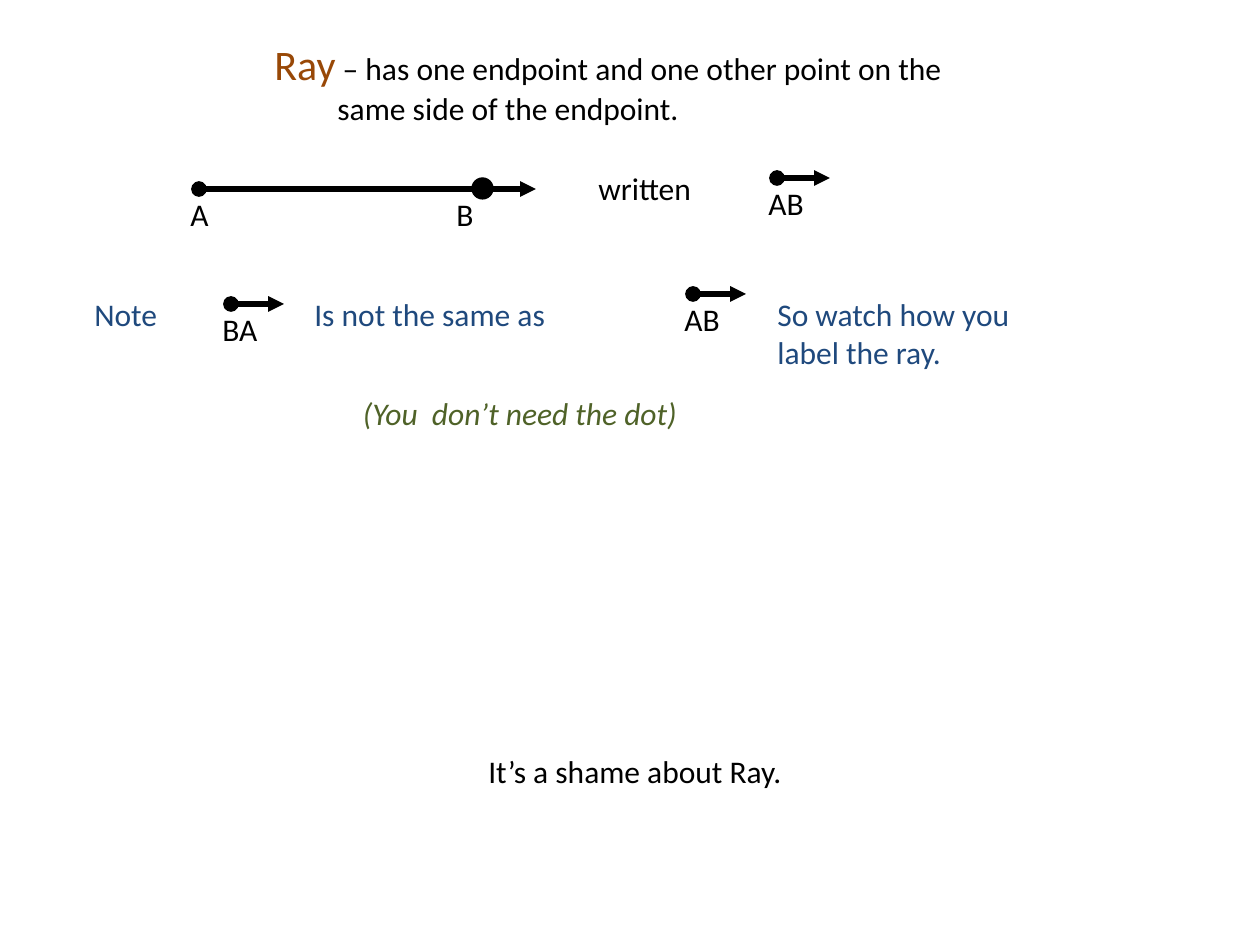
from pptx import Presentation
from pptx.dml.color import RGBColor
from pptx.enum.shapes import MSO_CONNECTOR as Connector, MSO_SHAPE as Shape
from pptx.enum.text import PP_ALIGN as Align
from pptx.oxml.ns import qn
from pptx.util import Pt
from lxml.etree import SubElement

PX = 914400 / 126
BLACK, BLUE, BROWN, GREEN = "000000", "1F497D", "984807", "4F6228"


def px(*lengths):
    return [round(length * PX) for length in lengths]


def color(value):
    return RGBColor.from_string(value)


deck = Presentation()
deck.slide_width, deck.slide_height = px(1260, 945)
page = deck.slides.add_slide(deck.slide_layouts[6])

# Rays: start x, height, end x
rays = [(199, 189, 536), (777, 178, 830), (231, 304, 284), (693, 294, 746)]
for left, y, right in rays:
    ray = page.shapes.add_connector(Connector.STRAIGHT, *px(left, y, right, y))
    ray.line.color.rgb = color(BLACK)
    ray.line.width = Pt(3)
    line = ray.line._get_or_add_ln()
    SubElement(line, qn("a:headEnd"), type="oval")
    SubElement(line, qn("a:tailEnd"), type="triangle")
    SubElement(ray._element.spPr, qn("a:effectLst"))

# Point B on the long ray
dot = page.shapes.add_shape(Shape.OVAL, *px(472, 178, 21, 21))
dot.shadow.inherit = False
dot.fill.solid()
dot.fill.fore_color.rgb = color(BLACK)
dot.line.color.rgb = color(BLACK)
dot.line.width = Pt(0.75)

# Texts: place, paragraphs of (words, format) spans
plain = {"size": Pt(18), "name": "Calibri", "color": BLACK}
term = plain | {"size": Pt(24), "color": BROWN}
note = plain | {"color": BLUE}
hint = plain | {"color": GREEN, "italic": True}
texts = [
    ((262, 32, 709, 102), Align.LEFT, [
        [("Ray", term), (" – has one endpoint and one other point on the", plain)],
        [("\tsame side of the endpoint.", plain)]]),
    ((586, 163, 149, 63), Align.LEFT, [[("written", plain)]]),
    ((82, 289, 137, 63), Align.LEFT, [[("Note", note)]]),
    ((302, 289, 380, 63), Align.LEFT, [[("Is not the same as", note)]]),
    ((765, 289, 367, 113), Align.LEFT, [
        [("So watch how you", note)], [("label the ray.", note)]]),
    ((336, 388, 368, 50), Align.CENTER, [[("(You  don’t need the dot)", hint)]]),
    ((336, 746, 598, 50), Align.CENTER, [[("It’s a shame about Ray.", plain)]]),
]

# Each ray's label hangs just below its start
labels = [("A\tB", 336), ("AB", 82), ("BA", 82), ("AB", 82)]
for (left, y, right), (words, width) in zip(rays, labels):
    texts.append(((left - 21, y, width, 63), Align.LEFT, [[(words, plain)]]))

for place, align, paragraphs in texts:
    box = page.shapes.add_textbox(*px(*place))
    frame = box.text_frame
    frame.word_wrap = True
    for number, spans in enumerate(paragraphs):
        para = frame.add_paragraph() if number else frame.paragraphs[0]
        para.alignment = align
        for words, style in spans:
            span = para.add_run()
            span.text = words
            for key, value in style.items():
                if key == "color":
                    span.font.color.rgb = color(value)
                else:
                    setattr(span.font, key, value)
        # Tab stop that sets B under its point
        if spans[0][0] == "A\tB":
            stops = SubElement(para._p.get_or_add_pPr(), qn("a:tabLst"))
            SubElement(stops, qn("a:tab"), pos=str(px(266)[0]), algn="l")

deck.save("out.pptx")
